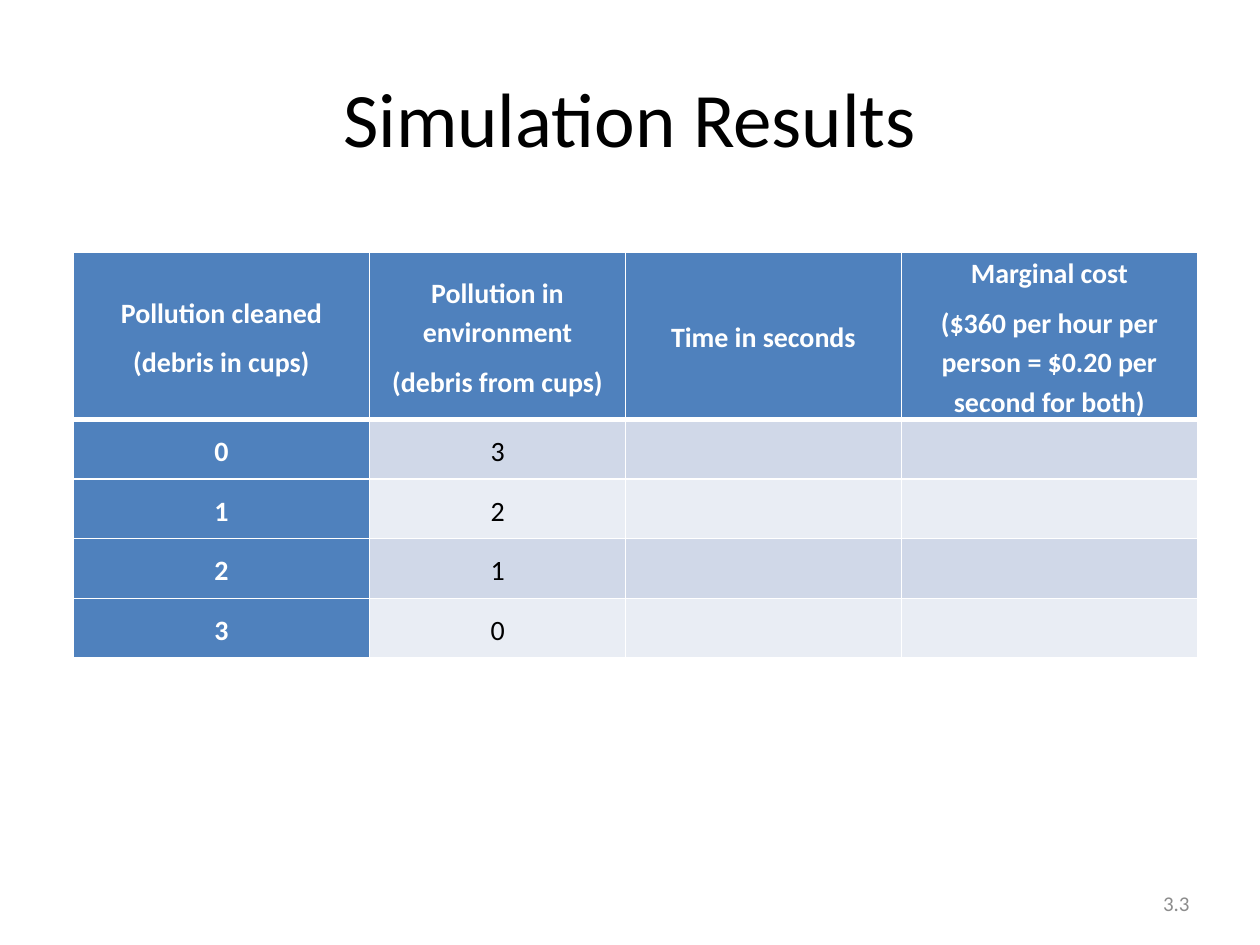
from dataclasses import dataclass

from lxml.etree import SubElement
from pptx import Presentation
from pptx.dml.color import RGBColor
from pptx.enum.text import MSO_ANCHOR, PP_ALIGN
from pptx.oxml.ns import qn
from pptx.util import Cm, Pt


@dataclass(frozen=True)
class Theme:
    font: str = "Calibri"
    black: str = "000000"
    white: str = "FFFFFF"
    gray: str = "8C8C8C"
    blue: str = "4F81BD"
    bands: tuple = ("D0D8E8", "E9EDF4")
    title: int = 44
    body: int = 16
    small: int = 12
    rule: int = 1
    thick: int = 3


THEME = Theme()
HEADS = (
    ("Pollution cleaned", "(debris in cups)"),
    ("Pollution in environment", "(debris from cups)"),
    ("Time in seconds",),
    ("Marginal cost", "($360 per hour per person = $0.20 per second for both)"),
)
CUPS = 3
WIDTHS = (5.97, 5.16, 5.56, 5.97)
HEIGHTS = (3.38,) + (1.2,) * (CUPS + 1)


def apply(target, values):
    for name, value in values.items():
        setattr(target, name, value)


def write(frame, lines, size, color, bold=False, para=None):
    """Fill a text frame with one centred paragraph per line."""
    for i, line in enumerate(lines):
        p = frame.add_paragraph() if i else frame.paragraphs[0]
        apply(p, {"alignment": PP_ALIGN.CENTER, **(para or {})})
        run = p.add_run()
        run.text = line
        apply(run.font, {"name": THEME.font, "size": Pt(size), "bold": bold})
        run.font.color.rgb = RGBColor.from_string(color)


def add_label(slide, box, text, size, color):
    frame = slide.shapes.add_textbox(*map(Cm, box)).text_frame
    apply(frame, {"word_wrap": True, "vertical_anchor": MSO_ANCHOR.MIDDLE})
    write(frame, [text], size, color)


def add_edges(cell, widths):
    """Draw white cell borders; widths maps each side's tag to points."""
    props = cell._tc.get_or_add_tcPr()
    for side, width in widths.items():
        line = SubElement(props, qn(f"a:{side}"), w=str(Pt(width)))
        fill = SubElement(line, qn("a:solidFill"))
        SubElement(fill, qn("a:srgbClr"), val=THEME.white)


def style_cell(cell, row, col):
    add_edges(cell, {
        "lnL": THEME.rule,
        "lnR": THEME.rule,
        "lnT": THEME.thick if row == 1 else THEME.rule,
        "lnB": THEME.thick if row == 0 else THEME.rule,
    })
    head = row == 0 or col == 0
    color = THEME.blue if head else THEME.bands[(row - 1) % 2]
    cell.fill.solid()
    cell.fill.fore_color.rgb = RGBColor.from_string(color)


def fill_cell(cell, lines, row, col):
    apply(cell, {
        "vertical_anchor": MSO_ANCHOR.MIDDLE,
        "margin_left": Cm(0.18), "margin_right": Cm(0.18),
        "margin_top": 0, "margin_bottom": 0,
    })
    head = row == 0 or col == 0
    para = {"line_spacing": 1.15, "space_after": Pt(12 if row else 6)}
    color = THEME.white if head else THEME.black
    write(cell.text_frame, lines, THEME.body, color, head, para)


def add_results(slide):
    rows = [HEADS] + [
        ((str(n),), (str(CUPS - n),), (), ()) for n in range(CUPS + 1)
    ]
    table = slide.shapes.add_table(
        len(rows), len(HEADS), Cm(1.48), Cm(5.08),
        Cm(sum(WIDTHS)), Cm(sum(HEIGHTS)),
    ).table
    apply(table, {"first_col": True, "horz_banding": False})
    for col, width in zip(table.columns, WIDTHS):
        col.width = Cm(width)
    for r, (cells, height) in enumerate(zip(rows, HEIGHTS)):
        table.rows[r].height = Cm(height)
        for c, lines in enumerate(cells):
            cell = table.cell(r, c)
            style_cell(cell, r, c)
            if lines:
                fill_cell(cell, lines, r, c)


def main():
    deck = Presentation()
    apply(deck, {"slide_width": Cm(25.4), "slide_height": Cm(19.05)})
    slide = deck.slides.add_slide(deck.slide_layouts[6])
    add_label(slide, (1.27, 0.76, 22.86, 3.18), "Simulation Results",
              THEME.title, THEME.black)
    add_results(slide)
    add_label(slide, (19.69, 17.7, 8.05, 1.02), "3.3",
              THEME.small, THEME.gray)
    deck.save("out.pptx")


if __name__ == "__main__":
    main()
